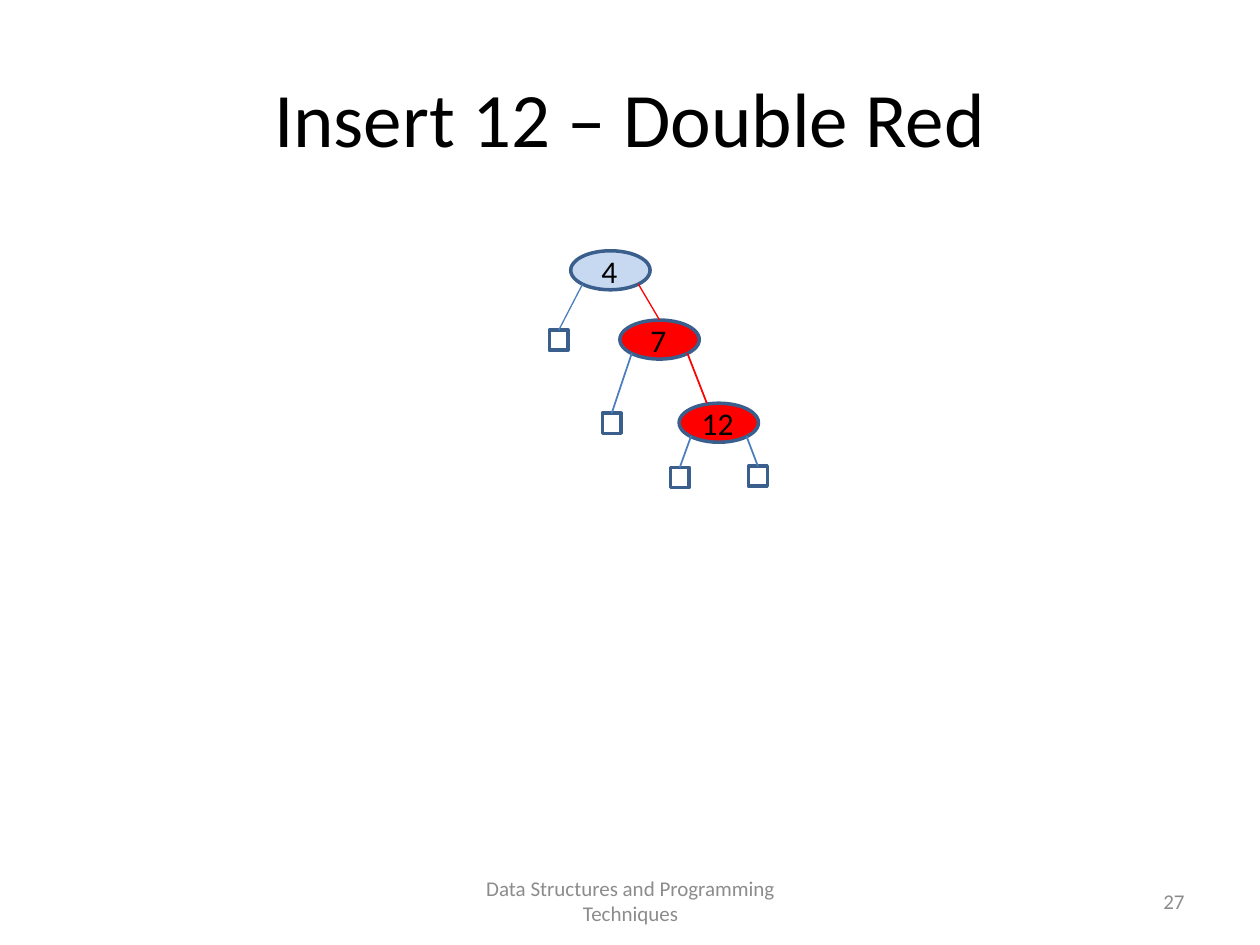
from dataclasses import dataclass

from lxml import etree
from pptx import Presentation
from pptx.dml.color import RGBColor
from pptx.enum.shapes import MSO_CONNECTOR, MSO_SHAPE
from pptx.enum.text import MSO_ANCHOR, MSO_AUTO_SIZE, PP_ALIGN
from pptx.oxml.ns import qn
from pptx.util import Inches, Pt

STRAIGHT = MSO_CONNECTOR.STRAIGHT
ELLIPSE, SQUARE = MSO_SHAPE.OVAL, MSO_SHAPE.RECTANGLE
TOP, MIDDLE = MSO_ANCHOR.TOP, MSO_ANCHOR.MIDDLE
CENTER, RIGHT = PP_ALIGN.CENTER, PP_ALIGN.RIGHT
FIXED, GROW = MSO_AUTO_SIZE.NONE, MSO_AUTO_SIZE.SHAPE_TO_FIT_TEXT
TITLE_ONLY = 5
COLUMNS, ROWS = 100, 75
NODE_SIZE, LEAF_SIZE = (6.3, 3.1), (1.5, 1.6)
DIAGONAL = 0.35


@dataclass(frozen=True)
class Theme:
    """Colours, font and sizes of the slide."""
    font: str = "Calibri"
    ink: str = "000000"
    muted: str = "8C8C8C"
    outline: str = "3A5F8C"
    edge: str = "4B7EBC"
    black_node: str = "C6D9F1"
    red: str = "FF0000"
    title_size: int = 44
    key_size: int = 18
    footer_size: int = 12
    outline_width: float = 2
    edge_width: float = 1
    thin_width: float = 0.75


def write(shape, text, size, color, font, align=CENTER, anchor=MIDDLE, fit=FIXED):
    """Put one formatted paragraph into a shape."""
    frame = shape.text_frame
    frame.word_wrap = True
    frame.auto_size = fit
    frame.vertical_anchor = anchor
    paragraph = frame.paragraphs[0]
    paragraph.alignment = align
    run = paragraph.add_run()
    run.text = text
    run.font.name = font
    run.font.size = Pt(size)
    run.font.color.rgb = RGBColor.from_string(color)


class TreeSlide:
    """Draw a red-black tree on one titled slide."""

    def __init__(self, deck, theme):
        """Add the slide and measure its grid cell."""
        self.theme = theme
        self.slide = deck.slides.add_slide(deck.slide_layouts[TITLE_ONLY])
        self.column = deck.slide_width / COLUMNS
        self.row = deck.slide_height / ROWS

    def place(self, left, top, width, height):
        """Turn grid columns and rows into lengths."""
        return (round(left * self.column), round(top * self.row),
                round(width * self.column), round(height * self.row))

    def title(self, text, *box):
        """Move and fill the title placeholder."""
        heading = self.slide.shapes.title
        heading.left, heading.top, heading.width, heading.height = self.place(*box)
        write(heading, text, self.theme.title_size, self.theme.ink, self.theme.font)

    def footer(self, text, *box, align=CENTER):
        """Add muted text at the foot of the slide."""
        note = self.slide.shapes.add_textbox(*self.place(*box))
        write(note, text, self.theme.footer_size, self.theme.muted,
              self.theme.font, align=align)

    def outlined(self, kind, size, left, top):
        """Add an outlined preset shape."""
        shape = self.slide.shapes.add_shape(kind, *self.place(left, top, *size))
        shape.shadow.inherit = False
        shape.line.color.rgb = RGBColor.from_string(self.theme.outline)
        shape.line.width = Pt(self.theme.outline_width)
        return shape

    def leaf(self, left, top):
        """Add an empty external node."""
        square = self.outlined(SQUARE, LEAF_SIZE, left, top)
        square.fill.background()
        return square

    def node(self, key, left, top, color):
        """Add an internal node with its key."""
        ellipse = self.outlined(ELLIPSE, NODE_SIZE, left, top)
        ellipse.fill.solid()
        ellipse.fill.fore_color.rgb = RGBColor.from_string(color)
        label = self.slide.shapes.add_textbox(
            *self.place(left + 0.6, top - 0.4, 4.9, 4))
        write(label, key, self.theme.key_size, self.theme.ink, self.theme.font,
              anchor=TOP, fit=GROW)
        return ellipse

    def edge(self, parent, child, side, color, width, shift=0):
        """Join a parent's lower left (-1) or right (1) to a child's top."""
        x = parent.left + parent.width * (0.5 + side * DIAGONAL)
        y = parent.top + parent.height * (0.5 + DIAGONAL)
        end_x = child.left + child.width / 2 + shift * self.column
        line = self.slide.shapes.add_connector(
            STRAIGHT, round(x), round(y), round(end_x), child.top)
        if not shift:
            line.end_connect(child, 0)
        line.line.color.rgb = RGBColor.from_string(color)
        line.line.width = Pt(width)
        etree.SubElement(line._element.spPr, qn("a:effectLst"))


def main():
    """Build and save the slide."""
    deck = Presentation()
    deck.slide_width, deck.slide_height = Inches(10), Inches(7.5)
    theme = Theme()
    page = TreeSlide(deck, theme)
    page.title("Insert 12 – Double Red", 5, 3, 90, 12.5)
    page.footer("Data Structures and Programming Techniques", 34.2, 69.5, 31.7, 4)
    page.footer("27", 71.7, 69.5, 23.3, 4, align=RIGHT)

    four = page.node("4", 45.3, 19.9, theme.black_node)
    seven = page.node("7", 49.2, 25.4, theme.red)
    twelve = page.node("12", 53.9, 32, theme.red)

    page.edge(four, seven, 1, theme.red, theme.thin_width)
    page.edge(seven, twelve, 1, theme.red, theme.edge_width, shift=-0.95)

    leaves = [
        (four, -1, 43.6, 26.2, theme.thin_width),
        (seven, -1, 47.8, 32.8, theme.edge_width),
        (twelve, -1, 53.2, 37.1, theme.edge_width),
        (twelve, 1, 59.4, 37, theme.edge_width),
    ]
    for parent, side, left, top, width in leaves:
        page.edge(parent, page.leaf(left, top), side, theme.edge, width)
    deck.save("out.pptx")


if __name__ == "__main__":
    main()
